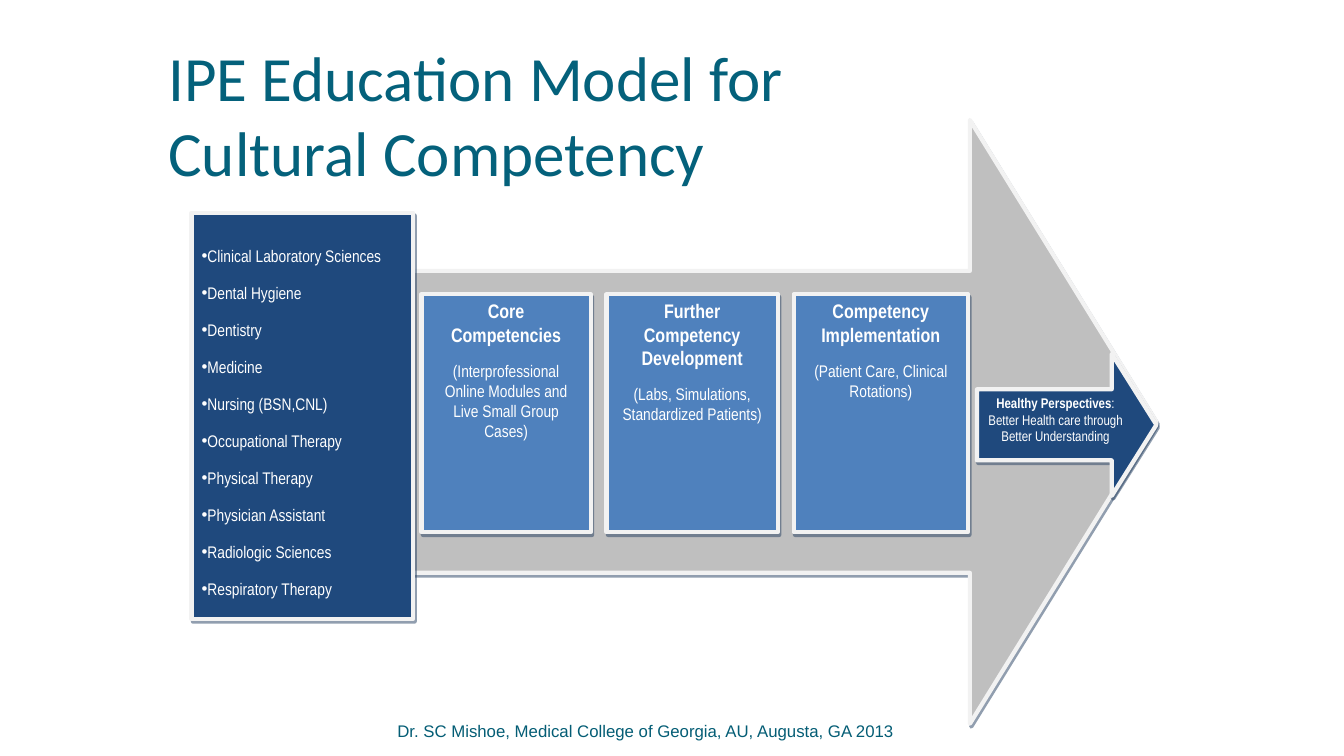
from lxml.etree import SubElement
from pptx import Presentation
from pptx.dml.color import RGBColor
from pptx.enum.shapes import MSO_SHAPE
from pptx.enum.text import MSO_ANCHOR, MSO_AUTO_SIZE, PP_ALIGN
from pptx.oxml.ns import qn
from pptx.util import Inches, Pt

TITLE = "IPE Education Model for \vCultural Competency"
DISCIPLINES = [
    "Clinical Laboratory Sciences", "Dental Hygiene", "Dentistry", "Medicine",
    "Nursing (BSN,CNL)", "Occupational Therapy", "Physical Therapy",
    "Physician Assistant", "Radiologic Sciences", "Respiratory Therapy",
]
STAGES = [
    (12.6, "Core Competencies",
     "(Interprofessional Online Modules and Live Small Group Cases)"),
    (12.75, "Further Competency Development",
     "(Labs, Simulations, Standardized Patients)"),
    (12.98, "Competency Implementation",
     "(Patient Care, Clinical Rotations)"),
]
OUTCOME = ("Healthy Perspectives",
           ": Better Health care through Better Understanding")
CREDIT = "Dr. SC Mishoe, Medical College of Georgia, AU, Augusta, GA 2013"

COLORS = {"title": "04617B", "credit": "045D75", "arrow": "BFBFBF",
          "navy": "1F497D", "blue": "4F81BD", "edge": "F2F2F2",
          "shadow": "243F60", "text": "FFFFFF"}

PLACES = {"title": (12.53, 14, 75.02, 11.07),
          "arrow": (30.31, 15.87, 55.74, 79.87),
          "disciplines": (14.25, 28.13, 16.5, 53.73),
          "outcome": (72.69, 46.8, 13.35, 18.8),
          "credit": (29.18, 92.67, 37.73, 5.33)}
STAGE_LEFT, STAGE_TOP, STAGE_HEIGHT, STAGE_GAP = 31.36, 38.93, 31.47, 1.17

WIDTH, HEIGHT = Inches(13.33), Inches(7.5)


def color(name):
    return RGBColor.from_string(COLORS[name])


def place(shares):
    sides = (WIDTH, HEIGHT, WIDTH, HEIGHT)
    return [int(side * share / 100) for side, share in zip(sides, shares)]


def move(shape, shares):
    shape.left, shape.top, shape.width, shape.height = place(shares)


def frame_text(shape, anchor, insets):
    frame = shape.text_frame
    sides = ("margin_left", "margin_top", "margin_right", "margin_bottom")
    values = dict(zip(sides, map(Inches, insets)), word_wrap=True,
                  auto_size=MSO_AUTO_SIZE.NONE, vertical_anchor=anchor)
    for name, value in values.items():
        setattr(frame, name, value)
    return frame


def write(paragraph, text, size, font="Arial Narrow", ink="text", bold=False):
    run = paragraph.add_run()
    run.text = text
    for name, value in {"size": Pt(size), "name": font, "bold": bold}.items():
        setattr(run.font, name, value)
    run.font.color.rgb = color(ink)


def decorate(shape, fill):
    shape.fill.solid()
    shape.fill.fore_color.rgb = color(fill)
    shape.line.color.rgb = color("edge")
    shape.line.width = Pt(3)
    shape.shadow.inherit = False
    effects = shape._element.spPr.find(qn("a:effectLst"))
    cast = SubElement(effects, qn("a:outerShdw"), blurRad="0",
                      dist=str(Pt(2.2)), dir=str(63 * 60000),
                      algn="ctr", rotWithShape="0")
    tint = SubElement(cast, qn("a:srgbClr"), val=COLORS["shadow"])
    SubElement(tint, qn("a:alpha"), val="50000")


def add_block(slide, kind, shares, fill, head_depth=None):
    block = slide.shapes.add_shape(kind, *place(shares))
    if head_depth:
        block.adjustments[1] = head_depth
    decorate(block, fill)
    return block


def centred(paragraph, after=0):
    paragraph.alignment = PP_ALIGN.CENTER
    paragraph.space_after = Pt(after)
    return paragraph


def main():
    deck = Presentation()
    deck.slide_width, deck.slide_height = WIDTH, HEIGHT
    slide = deck.slides.add_slide(deck.slide_layouts[1])

    title = slide.shapes.title
    move(title, PLACES["title"])
    heading = frame_text(title, MSO_ANCHOR.BOTTOM, (0, 0.05, 0, 0)).paragraphs[0]
    heading.alignment = PP_ALIGN.LEFT
    first, second = TITLE.split("\v")
    write(heading, first, 45, "Calibri", "title")
    heading.add_line_break()
    write(heading, second, 45, "Calibri", "title")

    disciplines = slide.placeholders[1]
    move(disciplines, PLACES["disciplines"])
    decorate(disciplines, "navy")
    listing = frame_text(disciplines, MSO_ANCHOR.TOP, (0.1, 0.33, 0.1, 0.05))
    for index, discipline in enumerate(DISCIPLINES):
        item = listing.add_paragraph() if index else listing.paragraphs[0]
        props = item._p.get_or_add_pPr()
        props.set("marL", "0")
        props.set("indent", "0")
        SubElement(props, qn("a:buChar"), char="•")
        item.space_before = Pt(6 if index else 0)
        item.space_after = Pt(6)
        write(item, discipline, 12)

    arrow = add_block(slide, MSO_SHAPE.RIGHT_ARROW, PLACES["arrow"], "arrow", 0.309)
    disciplines._element.addprevious(arrow._element)

    left = STAGE_LEFT
    for width, name, detail in STAGES:
        stage = add_block(slide, MSO_SHAPE.RECTANGLE,
                          (left, STAGE_TOP, width, STAGE_HEIGHT), "blue")
        frame = frame_text(stage, MSO_ANCHOR.TOP, (0.1, 0.05, 0.1, 0.05))
        write(centred(frame.paragraphs[0], 10), name, 14, bold=True)
        write(centred(frame.add_paragraph(), 10), detail, 12)
        left += width + STAGE_GAP

    outcome = add_block(slide, MSO_SHAPE.RIGHT_ARROW, PLACES["outcome"], "navy", 0.314)
    frame = frame_text(outcome, MSO_ANCHOR.TOP, (0.1, 0.05, 0.1, 0.05))
    result = centred(frame.paragraphs[0], 10)
    for text, bold in zip(OUTCOME, (True, False)):
        write(result, text, 10, bold=bold)

    credit = slide.shapes.add_textbox(*place(PLACES["credit"]))
    frame = frame_text(credit, MSO_ANCHOR.BOTTOM, (0, 0, 0, 0))
    write(centred(frame.paragraphs[0]), CREDIT, 12, "Arial", "credit")

    deck.save("out.pptx")


if __name__ == "__main__":
    main()
